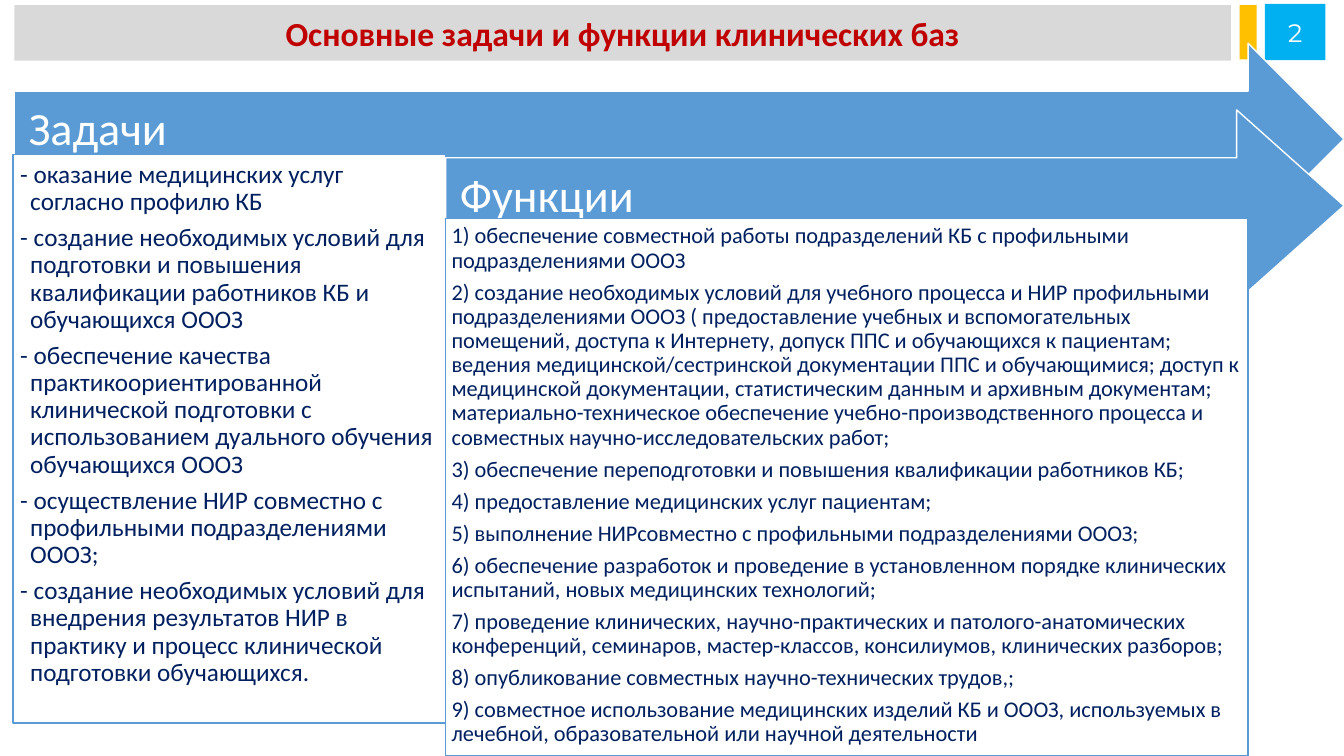
from lxml import etree
from pptx import Presentation
from pptx.dml.color import RGBColor
from pptx.enum.shapes import MSO_SHAPE
from pptx.enum.text import MSO_ANCHOR, MSO_AUTO_SIZE, PP_ALIGN
from pptx.oxml.ns import qn
from pptx.util import Cm, Pt

RECTANGLE = MSO_SHAPE.RECTANGLE
RIGHT_ARROW = MSO_SHAPE.RIGHT_ARROW
TOP = MSO_ANCHOR.TOP
MIDDLE = MSO_ANCHOR.MIDDLE
LEFT = PP_ALIGN.LEFT
CENTER = PP_ALIGN.CENTER
NO_AUTOFIT = MSO_AUTO_SIZE.NONE

WHITE = RGBColor(0xFF, 0xFF, 0xFF)
GREY = RGBColor(0xD9, 0xD9, 0xD9)
RED = RGBColor(0xC0, 0x00, 0x00)
YELLOW = RGBColor(0xFF, 0xC0, 0x00)
CYAN = RGBColor(0x00, 0xB0, 0xF0)
BLUE = RGBColor(0x5B, 0x9B, 0xD5)
NAVY = RGBColor(0x00, 0x20, 0x60)

TASKS = [
    "- оказание медицинских услуг согласно профилю КБ",
    "- создание необходимых условий для подготовки и повышения квалификации "
    "работников КБ и обучающихся ОООЗ",
    "- обеспечение качества практикоориентированной клинической подготовки "
    "с использованием дуального обучения обучающихся ОООЗ",
    "- осуществление НИР совместно с профильными подразделениями ОООЗ;",
    "- создание необходимых условий для внедрения результатов НИР в практику "
    "и процесс клинической подготовки обучающихся.",
]
FUNCTIONS = [
    "1) обеспечение совместной работы подразделений КБ с профильными "
    "подразделениями ОООЗ",
    "2) создание необходимых условий для учебного процесса и НИР профильными "
    "подразделениями ОООЗ ( предоставление учебных и вспомогательных помещений, "
    "доступа к Интернету, допуск ППС и обучающихся к пациентам; ведения "
    "медицинской/сестринской документации ППС и обучающимися; доступ к "
    "медицинской документации, статистическим данным и архивным документам; "
    "материально-техническое обеспечение учебно-производственного процесса и "
    "совместных научно-исследовательских работ;",
    "3) обеспечение переподготовки и повышения квалификации работников КБ;",
    "4) предоставление медицинских услуг пациентам;",
    "5) выполнение НИРсовместно с профильными подразделениями ОООЗ;",
    "6) обеспечение разработок и проведение в установленном порядке клинических "
    "испытаний, новых медицинских технологий;",
    "7) проведение клинических, научно-практических и патолого-анатомических "
    "конференций, семинаров, мастер-классов, консилиумов, клинических разборов;",
    "8) опубликование совместных научно-технических трудов,;",
    "9) совместное использование медицинских изделий КБ и ОООЗ, используемых в "
    "лечебной, образовательной или научной деятельности",
]


def write_text(shape, paragraphs, size, color, font="Calibri", bold=False,
               align=LEFT, anchor=MIDDLE, insets=(0.25, 0.13, 0.25, 0.13),
               line_spacing=1.0, space_after=0, hanging=0):
    frame = shape.text_frame
    frame.text = "\n".join(paragraphs)
    frame.word_wrap = True
    frame.auto_size = NO_AUTOFIT
    frame.vertical_anchor = anchor
    (frame.margin_left, frame.margin_top,
     frame.margin_right, frame.margin_bottom) = map(Cm, insets)
    for paragraph in frame.paragraphs:
        paragraph.alignment = align
        paragraph.line_spacing = line_spacing
        paragraph.space_before = Pt(0)
        paragraph.space_after = Pt(space_after)
        paragraph.font.name = font
        paragraph.font.size = Pt(size)
        paragraph.font.bold = bold
        paragraph.font.color.rgb = color
        properties = paragraph._p.get_or_add_pPr()
        properties.set("marL", str(Cm(hanging)))
        properties.set("indent", str(-Cm(hanging)))
        properties.insert_element_before(
            etree.SubElement(properties, qn("a:buNone")), "a:defRPr")


def paint(shape, fill, line=None):
    shape.fill.solid()
    shape.fill.fore_color.rgb = fill
    if line is None:
        shape.line.fill.background()
    else:
        shape.line.color.rgb = line
        shape.line.width = Pt(1)


def place(placeholder, box):
    (placeholder.left, placeholder.top,
     placeholder.width, placeholder.height) = map(Cm, box)


def add_block(slide, preset, box, fill, line=None):
    block = slide.shapes.add_shape(preset, *map(Cm, box))
    block.shadow.inherit = False
    paint(block, fill, line)
    return block


def add_arrow(slide, heading, box, head_ratio):
    arrow = add_block(slide, RIGHT_ARROW, box, BLUE, WHITE)
    arrow.adjustments[0] = 0.5
    arrow.adjustments[1] = head_ratio
    write_text(arrow, [heading], 33, WHITE, line_spacing=0.9,
               insets=(0.36, 0.34, 0.25, 0.75))


def fill_list(slide, placeholder, items, box, size, inset, hanging=0):
    place(placeholder, box)
    paint(placeholder, WHITE, BLUE)
    write_text(placeholder, items, size, NAVY, anchor=TOP, insets=(inset,) * 4,
               line_spacing=0.9, space_after=0.35 * size, hanging=hanging)
    slide.shapes._spTree.append(placeholder._element)


def main():
    presentation = Presentation()
    presentation.slide_width = Cm(33.87)
    presentation.slide_height = Cm(19.05)
    slide = presentation.slides.add_slide(presentation.slide_layouts[3])
    title, tasks, functions = slide.placeholders

    place(title, (0.36, 0.13, 30.66, 1.4))
    paint(title, GREY)
    write_text(title, ["Основные задачи и функции клинических баз"], 24, RED,
               bold=True, align=CENTER)

    add_block(slide, RECTANGLE, (31.24, 0.13, 0.43, 1.37), YELLOW)
    page_number = add_block(slide, RECTANGLE, (31.88, 0.1, 1.52, 1.42), CYAN)
    write_text(page_number, ["2"], 18, WHITE, font="Montserrat", align=CENTER)

    add_arrow(slide, "Задачи", (0.36, 1.09, 33.51, 4.83), 0.5)
    fill_list(slide, tasks, TASKS, (0.33, 3.89, 10.9, 14.33), 18, 0.18, 0.25)
    add_arrow(slide, "Функции", (11.23, 2.77, 22.64, 4.83), 0.56)
    fill_list(slide, functions, FUNCTIONS, (11.23, 5.51, 20.22, 13.54), 16, 0.15)

    presentation.save("out.pptx")


if __name__ == "__main__":
    main()
